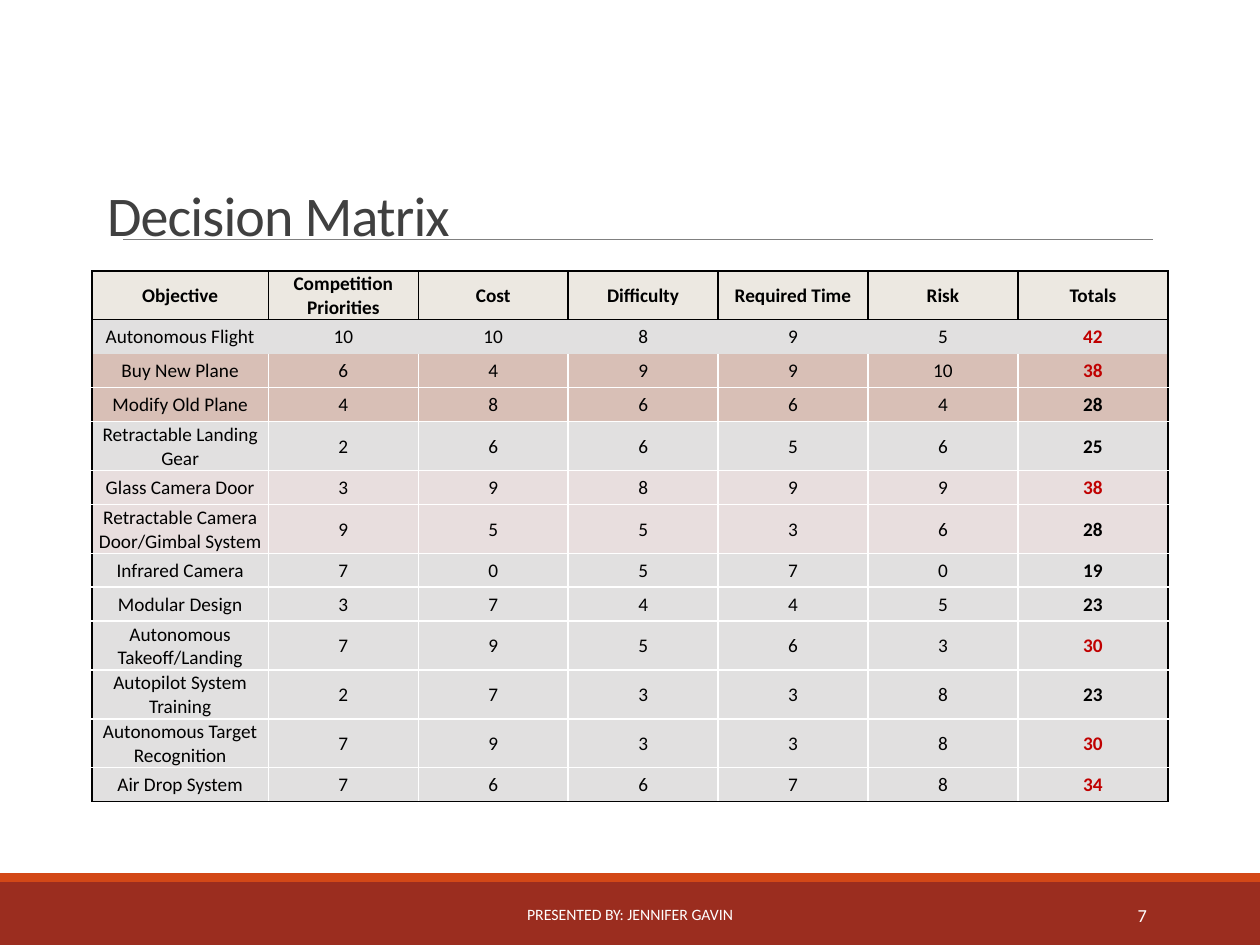
from lxml import etree
from pptx import Presentation
from pptx.dml.color import RGBColor
from pptx.enum.shapes import MSO_CONNECTOR, MSO_SHAPE
from pptx.enum.text import MSO_ANCHOR, MSO_AUTO_SIZE, PP_ALIGN
from pptx.oxml.ns import qn
from pptx.util import Inches, Pt

RECTANGLE = MSO_SHAPE.RECTANGLE
STRAIGHT = MSO_CONNECTOR.STRAIGHT
MIDDLE, BOTTOM = MSO_ANCHOR.MIDDLE, MSO_ANCHOR.BOTTOM
LEFT, CENTER, RIGHT = PP_ALIGN.LEFT, PP_ALIGN.CENTER, PP_ALIGN.RIGHT
NO_AUTOFIT = MSO_AUTO_SIZE.NONE

FONT = "Calibri"
TITLE_ONLY = 5
SLIDE_W, SLIDE_H = 10, 7.5
COLORS = {
    "band": "9B2D1F", "stripe": "D34817", "rule": "808080", "title": "404040",
    "black": "000000", "white": "FFFFFF", "high": "C00000",
    "header": "ECE8E1", "plain": "E1E0E0", "plane": "D8BFB6", "camera": "E8DEDE",
}
HIGH_TOTAL = 30
LABEL_WIDTH, SCORE_WIDTH = 1.4, 1.19
ONE_LINE, TWO_LINES = 0.27, 0.36
WRAP_LENGTH = 20

HEADINGS = ["Objective", "Competition Priorities", "Cost", "Difficulty",
            "Required Time", "Risk", "Totals"]
OBJECTIVES = [
    ("plain", "Autonomous Flight", 10, 10, 8, 9, 5, 42),
    ("plane", "Buy New Plane", 6, 4, 9, 9, 10, 38),
    ("plane", "Modify Old Plane", 4, 8, 6, 6, 4, 28),
    ("plain", "Retractable Landing Gear", 2, 6, 6, 5, 6, 25),
    ("camera", "Glass Camera Door", 3, 9, 8, 9, 9, 38),
    ("camera", "Retractable Camera Door/Gimbal System", 9, 5, 5, 3, 6, 28),
    ("plain", "Infrared Camera", 7, 0, 5, 7, 0, 19),
    ("plain", "Modular Design", 3, 7, 4, 4, 5, 23),
    ("plain", "Autonomous Takeoff/Landing", 7, 9, 5, 6, 3, 30),
    ("plain", "Autopilot System Training", 2, 7, 3, 3, 8, 23),
    ("plain", "Autonomous Target Recognition", 7, 9, 3, 3, 8, 30),
    ("plain", "Air Drop System", 7, 6, 6, 7, 8, 34),
]


def rgb(name):
    return RGBColor.from_string(COLORS[name])


def format_text(frame, size, color, align, anchor, bold=False):
    frame.word_wrap = True
    frame.vertical_anchor = anchor
    paragraph = frame.paragraphs[0]
    paragraph.alignment = align
    font = paragraph.runs[0].font
    font.name, font.size, font.bold = FONT, Pt(size), bold
    font.color.rgb = rgb(color)


def place_title(slide, left, top, width, height):
    title = slide.shapes.title
    title.left, title.top = Inches(left), Inches(top)
    title.width, title.height = Inches(width), Inches(height)
    frame = title.text_frame
    frame.text = "Decision Matrix"
    frame.auto_size = NO_AUTOFIT
    format_text(frame, 32, "title", LEFT, BOTTOM)
    paragraph = frame.paragraphs[0]
    paragraph.line_spacing = 0.85
    paragraph.runs[0].font._element.set("spc", "-50")


def add_rule(slide, left, top, width):
    rule = slide.shapes.add_connector(
        STRAIGHT, Inches(left), Inches(top), Inches(left + width), Inches(top))
    rule.line.color.rgb = rgb("rule")
    rule.line.width = Pt(0.5)
    etree.SubElement(rule._element.spPr, qn("a:effectLst"))


def add_band(slide, color, top, height):
    band = slide.shapes.add_shape(
        RECTANGLE, 0, Inches(top), Inches(SLIDE_W), Inches(height))
    band.shadow.inherit = False
    band.fill.solid()
    band.fill.fore_color.rgb = rgb(color)
    band.line.fill.background()


def add_footer(slide, top, height):
    stripe = 0.07
    add_band(slide, "band", top + stripe, height - stripe)
    add_band(slide, "stripe", top, stripe)
    for text, left, width, size, align in (
            ("PRESENTED BY: JENNIFER GAVIN", 3.02, 3.96, 9, CENTER),
            ("7", 8.12, 1.08, 10.5, RIGHT)):
        label = slide.shapes.add_textbox(
            Inches(left), Inches(top + 0.13), Inches(width), Inches(0.4))
        label.text_frame.text = text
        format_text(label.text_frame, size, "white", align, MIDDLE)


def set_borders(cell, sides):
    """Draw 1 pt borders; sides maps L, R, T and B to a colour name or None."""
    properties = cell._tc.get_or_add_tcPr()
    for side in "LRTB":
        border = etree.SubElement(properties, qn(f"a:ln{side}"), w=str(Pt(1)))
        color = sides[side]
        if color is None:
            etree.SubElement(border, qn("a:noFill"))
        else:
            fill = etree.SubElement(border, qn("a:solidFill"))
            etree.SubElement(fill, qn("a:srgbClr"), val=COLORS[color])


def border_sides(row, column, last_row, last_column):
    """Black header grid and outer frame, white inside, none around the first objective."""
    if row == 0:
        return dict.fromkeys("LRTB", "black")
    inner = None if row == 1 else "white"
    return {
        "L": "black" if column == 0 else inner,
        "R": "black" if column == last_column else inner,
        "T": "black" if row == 1 else None if row == 2 else "white",
        "B": "black" if row == last_row else inner,
    }


def fill_cell(cell, value, fill, color, bold, sides):
    cell.text = str(value)
    format_text(cell.text_frame, 11, color, CENTER, MIDDLE, bold)
    cell.vertical_anchor = MIDDLE
    cell.margin_left = cell.margin_right = cell.margin_top = Inches(0.01)
    cell.margin_bottom = 0
    set_borders(cell, sides)
    cell.fill.solid()
    cell.fill.fore_color.rgb = rgb(fill)


def add_matrix(slide, left, top):
    rows = [("header", *HEADINGS), *OBJECTIVES]
    widths = [LABEL_WIDTH] + [SCORE_WIDTH] * (len(HEADINGS) - 1)
    heights = [TWO_LINES if row == 0 or len(label) > WRAP_LENGTH else ONE_LINE
               for row, (_, label, *_) in enumerate(rows)]
    matrix = slide.shapes.add_table(
        len(rows), len(widths), Inches(left), Inches(top),
        Inches(sum(widths)), Inches(sum(heights))).table
    matrix.first_row = matrix.horz_banding = False
    for column, width in zip(matrix.columns, widths):
        column.width = Inches(width)
    for row, height in zip(matrix.rows, heights):
        row.height = Inches(height)

    last_row, last_column = len(rows) - 1, len(widths) - 1
    for row, (fill, *values) in enumerate(rows):
        for column, value in enumerate(values):
            is_total = row > 0 and column == last_column
            color = "high" if is_total and value >= HIGH_TOTAL else "black"
            fill_cell(matrix.cell(row, column), value, fill, color,
                      row == 0 or is_total,
                      border_sides(row, column, last_row, last_column))


def main():
    presentation = Presentation()
    presentation.slide_width = Inches(SLIDE_W)
    presentation.slide_height = Inches(SLIDE_H)
    slide = presentation.slides.add_slide(presentation.slide_layouts[TITLE_ONLY])
    place_title(slide, 0.75, 0.27, 8.5, 1.75)
    add_rule(slide, 0.98, 1.9, 8.17)
    add_matrix(slide, 0.73, 2.15)
    add_footer(slide, 6.93, SLIDE_H - 6.93)
    presentation.save("out.pptx")


if __name__ == "__main__":
    main()
